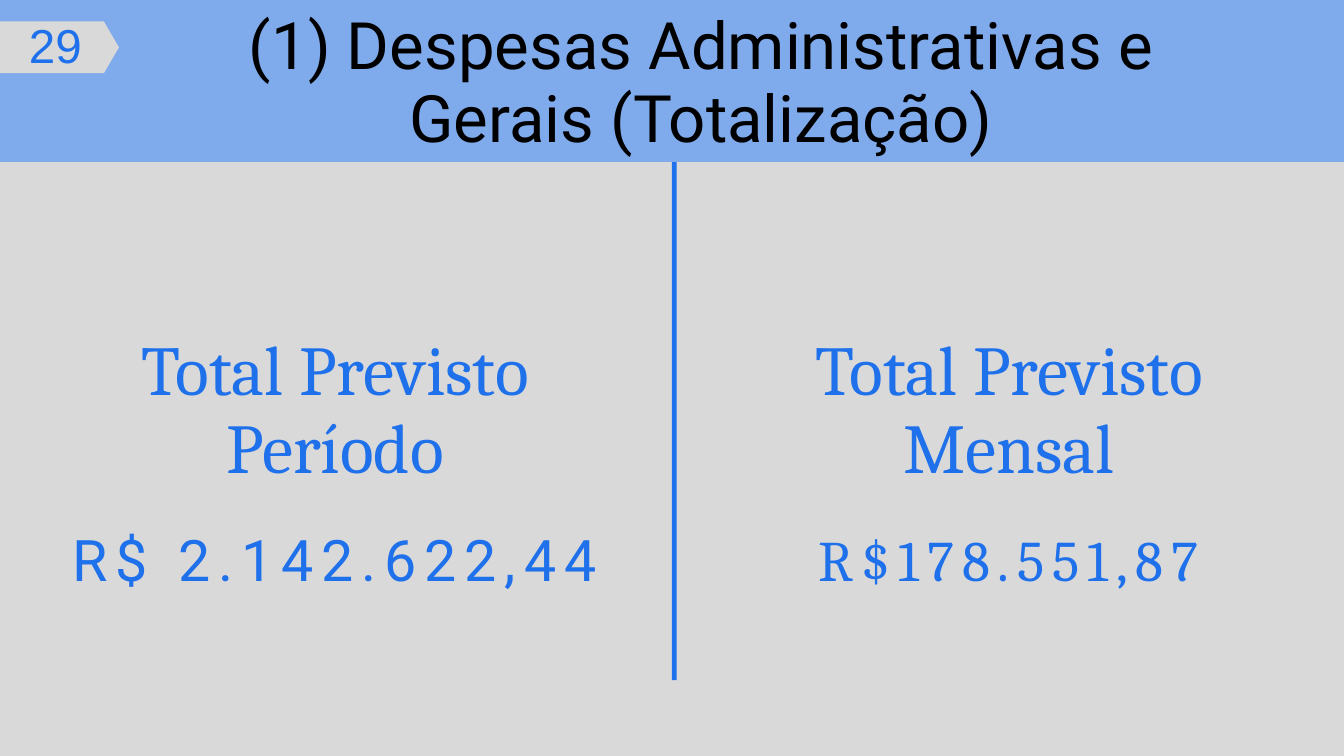
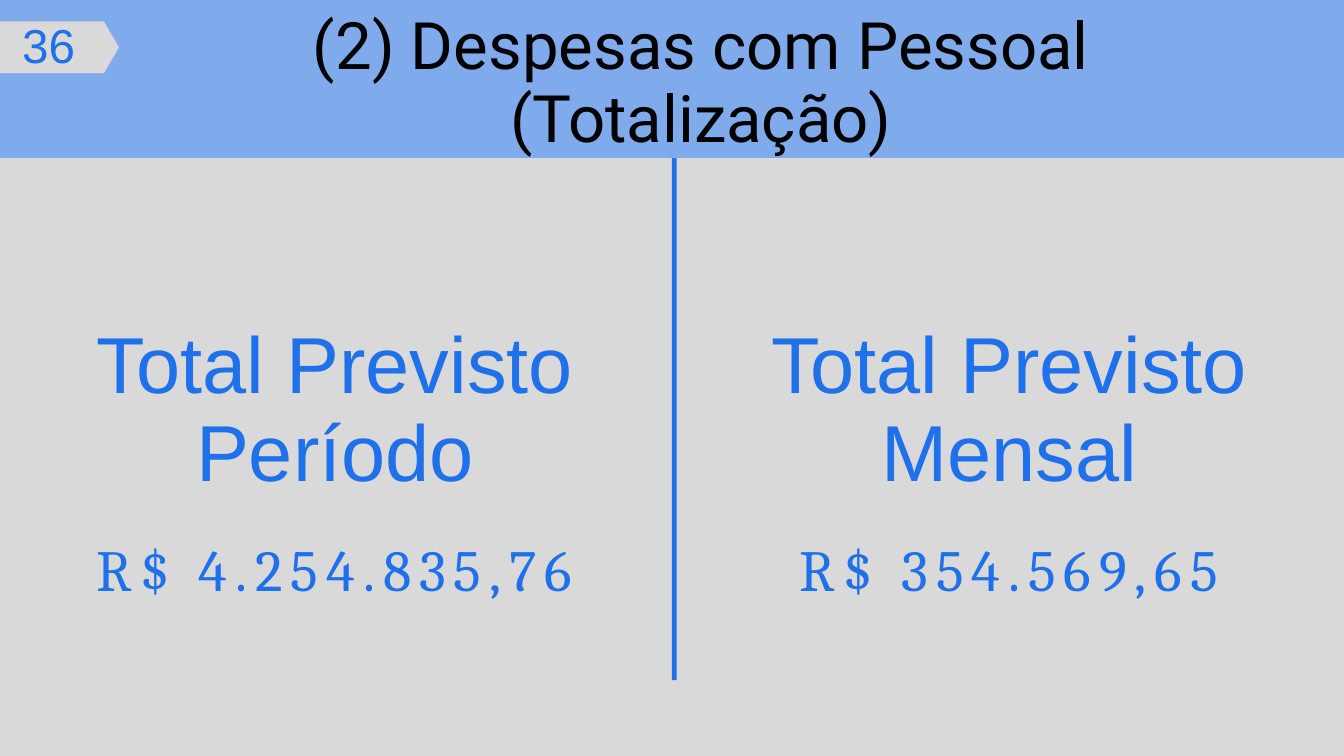
from pptx import Presentation
from pptx.dml.color import RGBColor
from pptx.enum.shapes import MSO_SHAPE as Shape
from pptx.enum.text import MSO_AUTO_SIZE as AutoSize, PP_ALIGN as Align
from pptx.util import Pt

# Scale: 100 px to the inch
PX = 9144
SLIDE_WIDTH, SLIDE_HEIGHT = 2000, 1125

# Colours
GREY = RGBColor(0xD9, 0xD9, 0xD9)
BLUE = RGBColor(0x1F, 0x70, 0xEB)
LIGHT_BLUE = RGBColor(0x7F, 0xAA, 0xEB)
BLACK = RGBColor(0x00, 0x00, 0x00)

# Layout of the two columns
COLUMN_LEFTS = (95, 1098)
COLUMN_WIDTH = 807

# Text styles: font, size, line spacing, colour, letter spacing, alignment
TITLE = dict(font="Roboto", size=70, leading=77.7, color=BLACK)
PAGE_NUMBER = dict(font="Arial", size=51, leading=49, align=Align.LEFT)
SERIF_LABEL = dict(font="Cambria", size=75, leading=83.2)
SANS_LABEL = dict(font="Arial", size=85, leading=94.3)
SERIF_AMOUNT = dict(font="Cambria", size=61.4, leading=91.5, tracking=8.5)
SANS_AMOUNT = dict(SERIF_AMOUNT, font="Roboto")
LARGE_AMOUNT = dict(font="Cambria", size=62.4, leading=93, tracking=8.6)

# Contents; every box is left, top, width, height
SLIDES = [
    dict(
        title="(1) Despesas Administrativas e Gerais (Totalização)",
        band_top=-28,
        number="29", number_box=(43, 40, 108, 69),
        label_style=SERIF_LABEL, label_top=494, label_height=235,
        amount_top=756, amount_height=120,
        totals=[("Total Previsto Período", "R$ 2.142.622,44", SANS_AMOUNT),
                ("Total Previsto Mensal", "R$178.551,87", SERIF_AMOUNT)],
    ),
    dict(
        title="(2) Despesas com Pessoal (Totalização)",
        band_top=-34,
        number="36", number_box=(33, 40, 144, 69),
        label_style=SANS_LABEL, label_top=478, label_height=266,
        amount_top=769, amount_height=124,
        totals=[("Total Previsto Período", "R$ 4.254.835,76", LARGE_AMOUNT),
                ("Total Previsto Mensal", "R$ 354.569,65", LARGE_AMOUNT)],
    ),
]


def set_all(target, values):
    for name, value in values.items():
        setattr(target, name, value)


class Deck:
    """Holds the presentation style and the current slide."""

    def __init__(self):
        self.presentation = Presentation()
        set_all(self.presentation, dict(slide_width=SLIDE_WIDTH * PX,
                                        slide_height=SLIDE_HEIGHT * PX))
        self.slide = None

    def new_slide(self):
        blank = self.presentation.slide_layouts[6]
        self.slide = self.presentation.slides.add_slide(blank)
        fill = self.slide.background.fill
        fill.solid()
        fill.fore_color.rgb = GREY

    def shape(self, kind, box, color):
        shape = self.slide.shapes.add_shape(kind, *(side * PX for side in box))
        shape.shadow.inherit = False
        shape.fill.solid()
        shape.fill.fore_color.rgb = color
        shape.line.fill.background()
        return shape

    def text(self, text, box, font, size, leading, color=BLUE,
             tracking=0, align=Align.CENTER):
        frame = self.slide.shapes.add_textbox(
            *(side * PX for side in box)).text_frame
        set_all(frame, dict(margin_left=0, margin_top=0, margin_right=0,
                            margin_bottom=0, word_wrap=True,
                            auto_size=AutoSize.SHAPE_TO_FIT_TEXT))
        paragraph = frame.paragraphs[0]
        set_all(paragraph, dict(alignment=align, line_spacing=Pt(leading)))
        run = paragraph.add_run()
        run.text = text
        set_all(run.font, dict(name=font, size=Pt(size)))
        run.font.color.rgb = color
        if tracking:
            run._r.get_or_add_rPr().set("spc", str(round(tracking * 100)))

    def totals(self, content):
        for left, (label, amount, amount_style) in zip(COLUMN_LEFTS, content["totals"]):
            self.text(label, (left, content["label_top"], COLUMN_WIDTH,
                              content["label_height"]), **content["label_style"])
            self.text(amount, (left, content["amount_top"], COLUMN_WIDTH,
                               content["amount_height"]), **amount_style)

    def header(self, content):
        self.shape(Shape.RECTANGLE, (-34, content["band_top"], 2068, 269), LIGHT_BLUE)
        self.text(content["title"], (232, 15, 1622, 217), **TITLE)
        tag = self.shape(Shape.CHEVRON, (-40, 32, 217, 77), GREY)
        tag.adjustments[0] = 0.29
        self.text(content["number"], content["number_box"], **PAGE_NUMBER)


def main():
    deck = Deck()
    for content in SLIDES:
        deck.new_slide()
        deck.totals(content)
        # Divider between the columns, tucked under the header band
        deck.shape(Shape.RECTANGLE, (1000, 112, 7, 900), BLUE)
        deck.header(content)
    deck.presentation.save("out.pptx")


if __name__ == "__main__":
    main()
